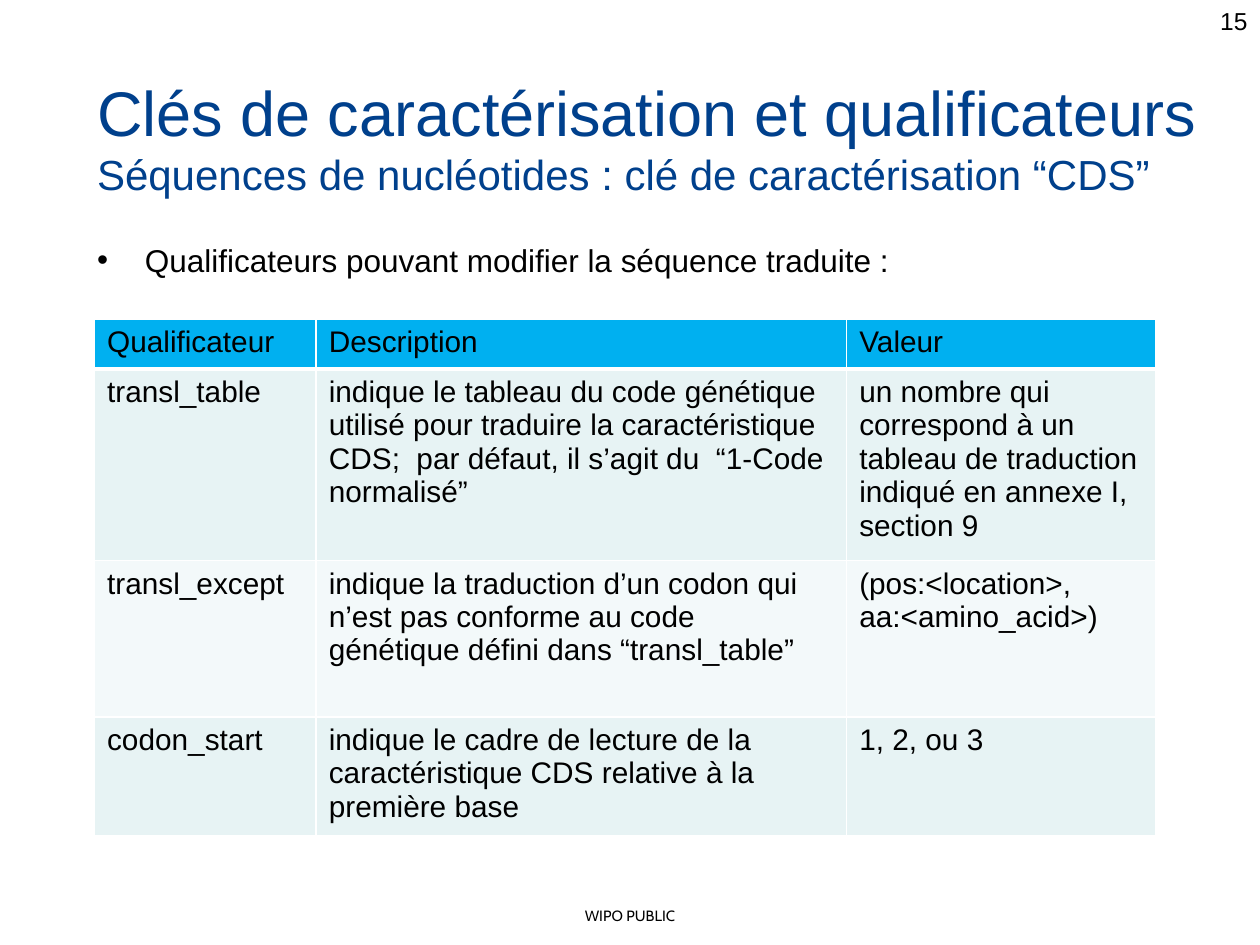
from lxml import etree
from pptx import Presentation
from pptx.dml.color import RGBColor
from pptx.enum.text import MSO_ANCHOR, MSO_AUTO_SIZE, PP_ALIGN
from pptx.oxml.ns import qn
from pptx.util import Inches, Pt

LEFT, CENTER, RIGHT = PP_ALIGN.LEFT, PP_ALIGN.CENTER, PP_ALIGN.RIGHT
TOP = MSO_ANCHOR.TOP
NO_FIT = MSO_AUTO_SIZE.NONE

BLACK, WHITE, NAVY = "000000", "FFFFFF", "00408C"
HEADER_FILL = "00B0F0"
BAND_FILLS = ("E7F3F4", "F3F9FA")

TITLE_LINES = (
    ("Clés de caractérisation et qualificateurs", 36),
    ("Séquences de nucléotides\u00a0: clé de caractérisation “CDS”", 24),
)
BULLET_TEXT = "Qualificateurs pouvant modifier la séquence traduite :"
COLUMN_WIDTHS = (1.76, 4.21, 2.45)
ROW_HEIGHTS = (0.4, 1.52, 1.24, 0.94)
ROWS = (
    ("Qualificateur", "Description", "Valeur"),
    ("transl_table",
     "indique le tableau du code génétique utilisé pour traduire la "
     "caractéristique CDS;  par défaut, il s’agit du  “1-Code normalisé”",
     "un nombre qui correspond à un tableau de traduction indiqué en "
     "annexe I, section 9"),
    ("transl_except",
     "indique la traduction d’un codon qui n’est pas conforme au code "
     "génétique défini dans “transl_table”",
     "(pos:<location>, aa:<amino_acid>)"),
    ("codon_start",
     "indique le cadre de lecture de la caractéristique CDS relative à la "
     "première base",
     "1, 2, ou 3"),
)


def rgb(color):
    return RGBColor.from_string(color)


def place(shape, left, top, width, height):
    shape.left, shape.top = Inches(left), Inches(top)
    shape.width, shape.height = Inches(width), Inches(height)


def prepare_frame(frame):
    frame.word_wrap = True
    frame.auto_size = NO_FIT
    frame.vertical_anchor = TOP


def style_paragraph(para, size, color=BLACK, align=LEFT, name="Arial"):
    para.alignment = align
    para.space_before = Pt(0)
    font = para.font
    font.name, font.size, font.bold = name, Pt(size), False
    font.color.rgb = rgb(color)


def add_label(page, text, position, size, align, name="Arial"):
    box = page.shapes.add_textbox(*map(Inches, position))
    prepare_frame(box.text_frame)
    para = box.text_frame.paragraphs[0]
    para.text = text
    style_paragraph(para, size, align=align, name=name)


def fill_title(title):
    place(title, 0.67, 0.47, 9, 1.25)
    frame = title.text_frame
    prepare_frame(frame)
    frame.margin_top = Inches(0.11)
    frame.text = "\n".join(text for text, size in TITLE_LINES)
    for para, (text, size) in zip(frame.paragraphs, TITLE_LINES):
        style_paragraph(para, size, NAVY)


def fill_body(body):
    place(body, 0.67, 1.86, 9.23, 5.64)
    prepare_frame(body.text_frame)
    para = body.text_frame.paragraphs[0]
    para.text = BULLET_TEXT
    properties = para._p.get_or_add_pPr()
    properties.set("marL", str(Inches(0.38)))
    properties.set("indent", str(Inches(-0.38)))
    etree.SubElement(properties, qn("a:buChar"), char="•")
    style_paragraph(para, 18)


def set_borders(cell, bottom_width):
    properties = cell._tc.get_or_add_tcPr()
    widths = {"lnL": 1, "lnR": 1, "lnT": 1, "lnB": bottom_width}
    for index, (side, width) in enumerate(widths.items()):
        line = etree.Element(qn(f"a:{side}"), w=str(Pt(width)))
        fill = etree.SubElement(line, qn("a:solidFill"))
        etree.SubElement(fill, qn("a:srgbClr"), val=WHITE)
        properties.insert(index, line)


def fill_cell(cell, text, fill, bottom_width):
    cell.fill.solid()
    cell.fill.fore_color.rgb = rgb(fill)
    cell.text = text
    style_paragraph(cell.text_frame.paragraphs[0], 17)
    set_borders(cell, bottom_width)


def add_qualifier_table(page):
    frame = page.shapes.add_table(
        len(ROWS), len(COLUMN_WIDTHS), Inches(0.75), Inches(2.53),
        Inches(sum(COLUMN_WIDTHS)), Inches(sum(ROW_HEIGHTS)))
    table = frame.table
    for column, width in zip(table.columns, COLUMN_WIDTHS):
        column.width = Inches(width)
    for index, (row, height, texts) in enumerate(zip(table.rows, ROW_HEIGHTS, ROWS)):
        row.height = Inches(height)
        fill = BAND_FILLS[(index - 1) % 2] if index else HEADER_FILL
        for cell, text in zip(row.cells, texts):
            fill_cell(cell, text, fill, 1 if index else 3)


def main():
    deck = Presentation()
    deck.slide_width, deck.slide_height = Inches(10), Inches(7.5)
    page = deck.slides.add_slide(deck.slide_layouts[1])
    add_label(page, "WIPO PUBLIC", (0, 7.15, 10, 0.24), 8.5, CENTER, "Cabin")
    add_label(page, "15", (7.67, 0, 2.33, 0.52), 14, RIGHT)
    fill_title(page.shapes.title)
    fill_body(page.placeholders[1])
    add_qualifier_table(page)
    deck.save("out.pptx")


if __name__ == "__main__":
    main()
